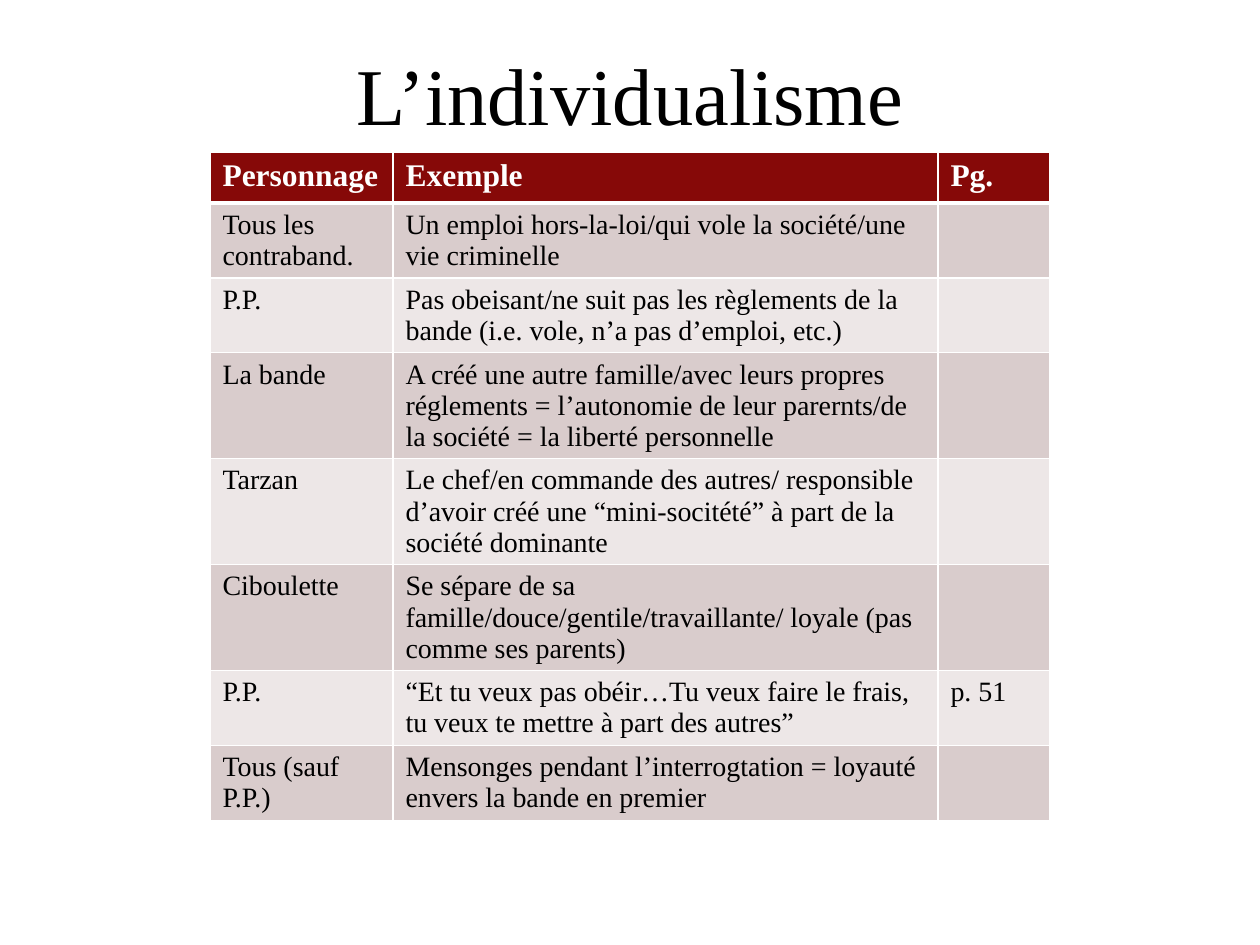
from lxml import etree
from pptx import Presentation
from pptx import util as u
from pptx.dml.color import RGBColor
from pptx.enum import text
from pptx.oxml.ns import qn

PX_PER_INCH = 126
FONT = "Times New Roman"
COLORS = {
    "ink": "000000",
    "white": "FFFFFF",
    "header": "860908",
    "odd": "D9CCCC",
    "even": "EDE7E7",
}
COLUMN_WIDTHS = [183, 545, 112]
ROW_HEIGHT = 51
HEADINGS = ["Personnage", "Exemple", "Pg."]
EXAMPLES = [
    ["Tous les contraband.",
     "Un emploi hors-la-loi/qui vole la société/une vie criminelle", ""],
    ["P.P.",
     "Pas obeisant/ne suit pas les règlements de la bande "
     "(i.e. vole, n’a pas d’emploi, etc.)", ""],
    ["La bande",
     "A créé une autre famille/avec leurs propres réglements = l’autonomie "
     "de leur parernts/de la société = la liberté personnelle", ""],
    ["Tarzan",
     "Le chef/en commande des autres/ responsible d’avoir créé une "
     "“mini-socitété” à part de la société dominante", ""],
    ["Ciboulette",
     "Se sépare de sa famille/douce/gentile/travaillante/ loyale "
     "(pas comme ses parents)", ""],
    ["P.P.",
     "“Et tu veux pas obéir…Tu veux faire le frais, "
     "tu veux te mettre à part des autres”", "p. 51"],
    ["Tous (sauf P.P.)",
     "Mensonges pendant l’interrogtation = loyauté envers la bande en premier", ""],
]


def px(length):
    return u.Emu(round(length * 914400 / PX_PER_INCH))


def rgb(name):
    return RGBColor.from_string(COLORS[name])


def add_run(paragraph, words, size, color, bold=False):
    run = paragraph.add_run()
    run.text = words
    run.font.name = FONT
    run.font.size = u.Pt(size)
    run.font.bold = bold
    run.font.color.rgb = rgb(color)


def add_title(slide, words):
    title = slide.shapes.title
    title.left, title.top, title.width, title.height = map(px, (126, 33, 1008, 120))
    title.text_frame.vertical_anchor = text.MSO_ANCHOR.MIDDLE
    paragraph = title.text_frame.paragraphs[0]
    paragraph.alignment = text.PP_ALIGN.CENTER
    add_run(paragraph, words, 46, "ink")


def set_borders(cell, widths):
    properties = cell._tc.get_or_add_tcPr()
    for side, width in widths.items():
        line = etree.SubElement(properties, qn(f"a:ln{side}"), w=str(u.Pt(width)))
        fill = etree.SubElement(line, qn("a:solidFill"))
        etree.SubElement(fill, qn("a:srgbClr"), val=COLORS["white"])


def fill_cell(cell, words, fill, size, color, bold, borders):
    set_borders(cell, borders)
    cell.fill.solid()
    cell.fill.fore_color.rgb = rgb(fill)
    if words:
        add_run(cell.text_frame.paragraphs[0], words, size, color, bold)


def add_examples_table(slide):
    rows = [HEADINGS] + EXAMPLES
    table = slide.shapes.add_table(
        len(rows), len(HEADINGS), px(210), px(152),
        px(sum(COLUMN_WIDTHS)), px(ROW_HEIGHT * len(rows)),
    ).table
    for column, width in zip(table.columns, COLUMN_WIDTHS):
        column.width = px(width)
    for index, entries in enumerate(rows):
        table.rows[index].height = px(ROW_HEIGHT)
        borders = {"L": 1, "R": 1, "T": 3 if index == 1 else 1,
                   "B": 3 if index == 0 else 1}
        if index == 0:
            style = ("header", 18, "white", True)
        else:
            style = ("odd" if index % 2 else "even", 16, "ink", False)
        for position, words in enumerate(entries):
            fill_cell(table.cell(index, position), words, *style, borders)


def main():
    presentation = Presentation()
    presentation.slide_width = px(1260)
    presentation.slide_height = px(945)
    slide = presentation.slides.add_slide(presentation.slide_layouts[5])
    slide.background.fill.solid()
    slide.background.fill.fore_color.rgb = rgb("white")
    add_title(slide, "L’individualisme")
    add_examples_table(slide)
    presentation.save("out.pptx")


if __name__ == "__main__":
    main()
